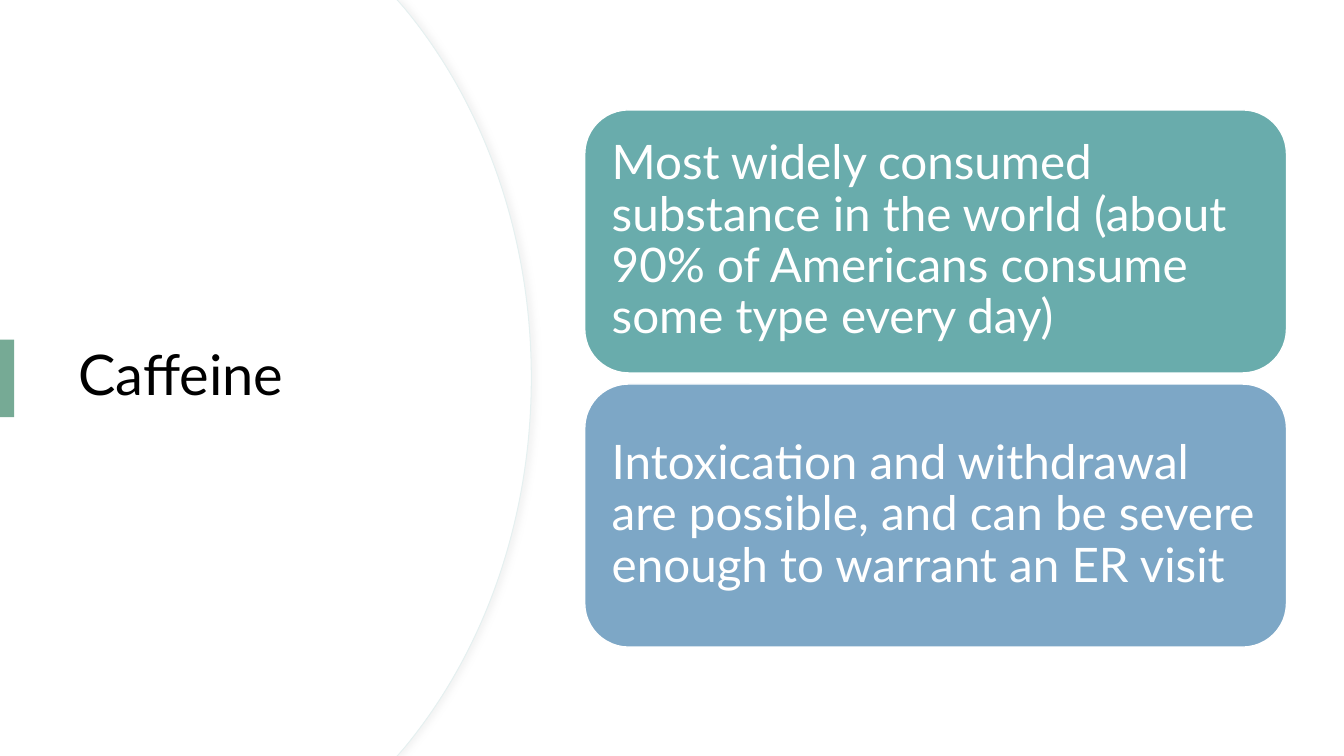
"""Build the caffeine slide: a curved title panel beside two rounded cards."""
from lxml import etree
from pptx import Presentation
from pptx.dml.color import RGBColor
from pptx.enum import shapes, text
from pptx.oxml import ns
from pptx.util import Inches, Pt


def paint(fmt, color):
    fmt.solid()
    fmt.fore_color.rgb = RGBColor.from_string(color)


def style(frame, words, size, color):
    frame.text = words
    frame.word_wrap = True
    frame.auto_size = text.MSO_AUTO_SIZE.NONE
    frame.vertical_anchor = text.MSO_ANCHOR.MIDDLE
    para = frame.paragraphs[0]
    para.alignment = text.PP_ALIGN.LEFT
    para.line_spacing = 0.9
    font = para.runs[0].font
    font.name, font.size = "Lato", Pt(size)
    paint(font.fill, color)


deck = Presentation()
deck.slide_width, deck.slide_height = Inches(13.33), Inches(7.5)
slide = deck.slides.add_slide(deck.slide_layouts[5])
items = slide.shapes

upper = [(3.94, 0), (4.01, 0.08), (4.79, 1.02), (5.27, 2.32), (5.27, 3.75)]
edge = upper + [(x, 7.5 - y) for x, y in reversed(upper[:-1])]

for shift in (0, 0.01):
    pen = items.build_freeform(0, 0)
    pen.add_line_segments([(Inches(x - shift), Inches(y)) for x, y in edge] + [(0, Inches(7.5))])
    panel = pen.convert_to_shape()
    lines = list(panel._element.iter(ns.qn("a:lnTo")))
    for first in (2, 5):
        bend = etree.Element(ns.qn("a:cubicBezTo"))
        lines[first].addprevious(bend)
        for line in lines[first:first + 3]:
            bend.append(line[0])
            line.getparent().remove(line)
    panel.shadow.inherit = False
    paint(panel.fill, "FFFFFF")
    if shift:
        panel.line.fill.background()
    else:
        paint(panel.line.fill, "E5F0F0")
        panel.line.width = Pt(0.75)
        glow = panel._element.spPr.find(ns.qn("a:effectLst"))
        cast = etree.SubElement(glow, ns.qn("a:outerShdw"), blurRad=str(Pt(4)),
                                dist=str(Pt(3)), dir="0", rotWithShape="0")
        tint = etree.SubElement(cast, ns.qn("a:srgbClr"), val="D9D9D9")
        etree.SubElement(tint, ns.qn("a:alpha"), val="30000")

title = items.title
title.left, title.top = Inches(0.68), Inches(1.27)
title.width, title.height = Inches(3.94), Inches(4.95)
style(title.text_frame, "Caffeine", 40, "000000")
items._spTree.append(title._element)

bar = items.add_shape(shapes.MSO_SHAPE.RECTANGLE, 0, Inches(3.37), Inches(0.14), Inches(0.77))
bar.shadow.inherit = False
paint(bar.fill, "76AA95")
bar.line.fill.background()

cards = [
    ("69ACAC", "Most widely consumed substance in the world "
               "(about 90% of Americans consume some type every day)"),
    ("7DA7C6", "Intoxication and withdrawal are possible, "
               "and can be severe enough to warrant an ER visit"),
]
for row, (color, words) in enumerate(cards):
    card = items.add_shape(shapes.MSO_SHAPE.ROUNDED_RECTANGLE, Inches(5.8),
                           Inches(1.09 + row * 2.72), Inches(6.96), Inches(2.61))
    card.shadow.inherit = False
    paint(card.fill, color)
    paint(card.line.fill, "FFFFFF")
    card.line.width = Pt(1)
    frame = card.text_frame
    style(frame, words, 34, "FFFFFF")
    frame.margin_left = frame.margin_right = Inches(0.14)
    frame.margin_top = frame.margin_bottom = Inches(0.14)

deck.save("out.pptx")
